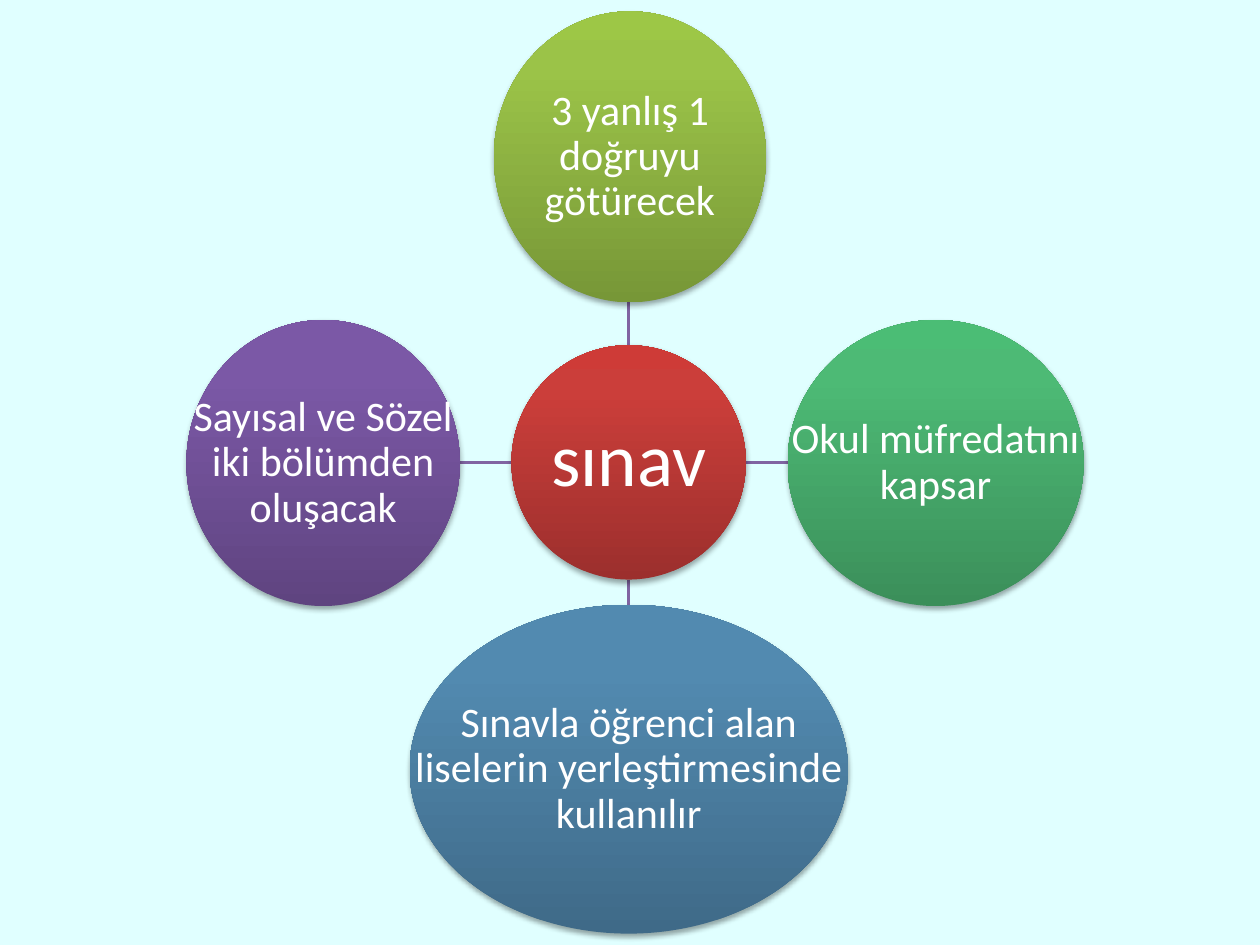
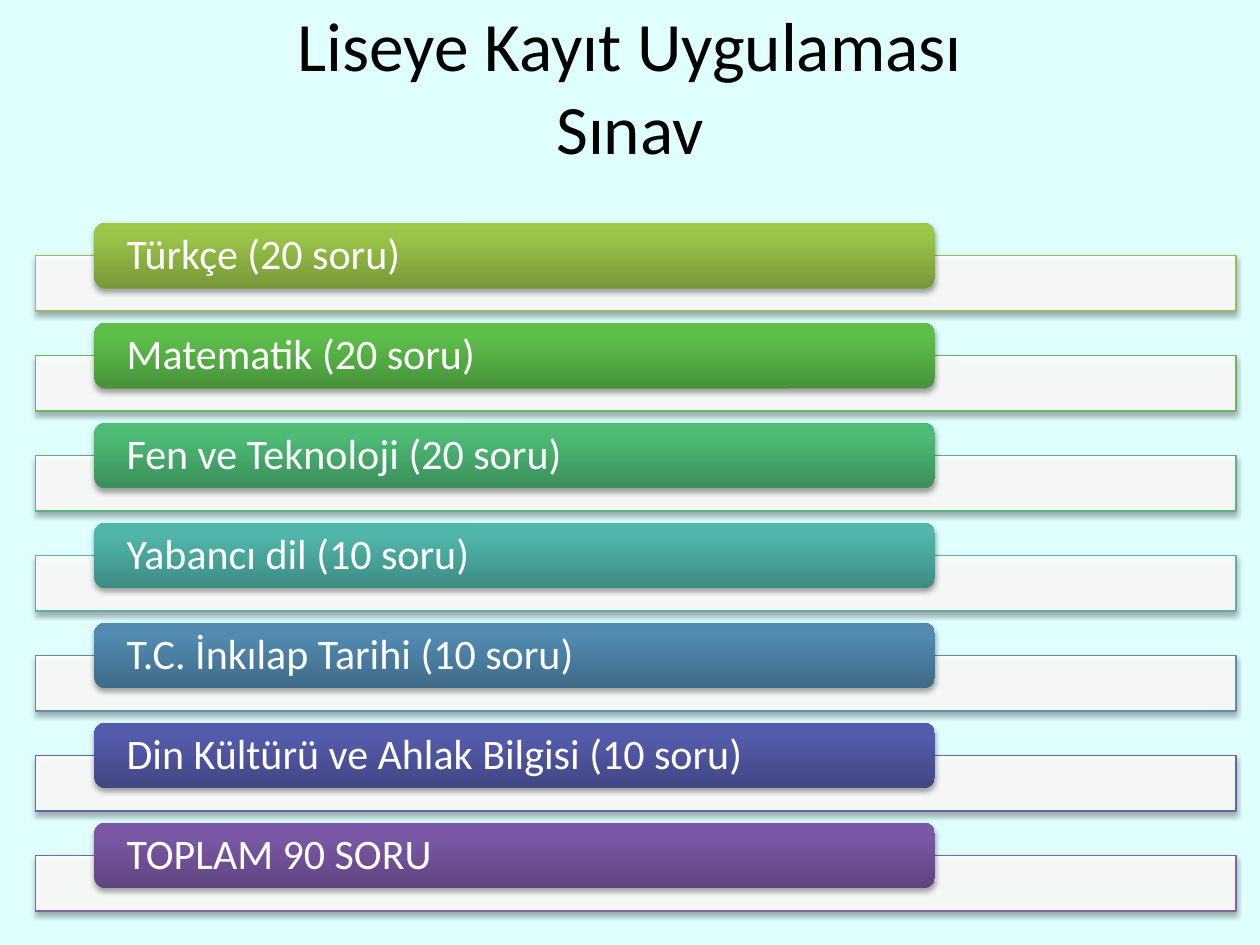
"""Builds two slides on the high school entrance exam: a hub diagram and a question list."""
from lxml import etree
from pptx import Presentation
from pptx.dml.color import RGBColor
from pptx.enum.shapes import MSO_CONNECTOR, MSO_SHAPE
from pptx.enum.text import MSO_ANCHOR, PP_ALIGN
from pptx.oxml.ns import qn
from pptx.util import Inches, Pt

OVAL, BAR, ROUNDED = MSO_SHAPE.OVAL, MSO_SHAPE.RECTANGLE, MSO_SHAPE.ROUNDED_RECTANGLE
STRAIGHT = MSO_CONNECTOR.STRAIGHT
MIDDLE = MSO_ANCHOR.MIDDLE
LEFT, CENTER = PP_ALIGN.LEFT, PP_ALIGN.CENTER

FONT = "Calibri"
BACKGROUND, WHITE, BLACK, SPOKE = "E0FFFF", "FFFFFF", "000000", "8064A2"
GRADIENT_STOPS = (0, 80, 100)
GRADIENTS = {
    "red": ("9C2F2D", "CB3E3A", "CE3B37"),
    "lime": ("779737", "9BC348", "9DC746"),
    "green": ("479339", "5CBF4A", "5BC249"),
    "emerald": ("3B8F5A", "4DBA75", "4BBD75"),
    "teal": ("3D8B83", "50B5AA", "4EB8AC"),
    "blue": ("3F6A88", "528AB0", "518BB3"),
    "indigo": ("414684", "555BAB", "545AAE"),
    "purple": ("5F4480", "7B58A6", "7C57A8"),
}

HUB = ("sınav", "red", (4.06, 2.74, 1.86, 1.86))
RULES = [
    ("3 yanlış 1 doğruyu götürecek", "lime", (3.92, 0.09, 2.16, 2.31)),
    ("Okul müfredatını kapsar", "emerald", (6.25, 2.54, 2.35, 2.27)),
    ("Sınavla öğrenci alan liselerin yerleştirmesinde kullanılır", "blue",
     (3.25, 4.8, 3.48, 2.61)),
    ("Sayısal ve Sözel iki bölümden oluşacak", "purple", (1.48, 2.54, 2.17, 2.27)),
]
SPOKES = [
    ((4.99, 2.74), (4.99, 2.4)),
    ((5.92, 3.67), (6.25, 3.67)),
    ((4.99, 4.6), (4.99, 4.8)),
    ((4.06, 3.67), (3.65, 3.67)),
]

TITLE_LINES = ["Liseye Kayıt Uygulaması", "Sınav"]
SUBJECTS = [
    ("Türkçe (20 soru)", "lime", "9BBB59"),
    ("Matematik (20 soru)", "green", "69B75B"),
    ("Fen ve Teknoloji (20 soru)", "emerald", "5CB37C"),
    ("Yabancı dil (10 soru)", "teal", "5EAFA6"),
    ("T.C. İnkılap Tarihi (10 soru)", "blue", "608CAB"),
    ("Din Kültürü ve Ahlak Bilgisi (10 soru)", "indigo", "6267A6"),
    ("TOPLAM 90 SORU", "purple", "8064A2"),
]
FIRST_TOP, LAST_TOP, BAR_DROP = 1.77, 6.53, 0.26


def color(value):
    return RGBColor.from_string(value)


def add_color(parent, value, alpha=None):
    element = etree.SubElement(parent, qn("a:srgbClr"), val=value)
    if alpha is not None:
        etree.SubElement(element, qn("a:alpha"), val=str(alpha * 1000))


def add_slide(presentation):
    slide = presentation.slides.add_slide(presentation.slide_layouts[6])
    slide.background.fill.solid()
    slide.background.fill.fore_color.rgb = color(BACKGROUND)
    return slide


def add_shadowed(slide, kind, box):
    shape = slide.shapes.add_shape(kind, *map(Inches, box))
    shape.line.fill.background()
    shape.shadow.inherit = False
    effects = shape._element.spPr.find(qn("a:effectLst"))
    shadow = etree.SubElement(effects, qn("a:outerShdw"), blurRad=str(Pt(3.1)),
                              dist=str(Pt(1.8)), dir="5400000", rotWithShape="0")
    add_color(shadow, BLACK, 35)
    return shape


def add_gradient_shape(slide, kind, box, gradient):
    shape = add_shadowed(slide, kind, box)
    shape.fill.gradient()
    shape.fill.gradient_angle = 90
    stops = shape._element.spPr.find(".//" + qn("a:gsLst"))
    stops.clear()
    for position, value in zip(GRADIENT_STOPS, GRADIENTS[gradient]):
        add_color(etree.SubElement(stops, qn("a:gs"), pos=str(position * 1000)), value)
    return shape


def write(shape, lines, size, ink=WHITE, align=CENTER, inset=0.02, spacing=0.9):
    frame = shape.text_frame
    frame.word_wrap = True
    frame.vertical_anchor = MIDDLE
    frame.margin_left = frame.margin_right = Inches(inset)
    frame.margin_top = frame.margin_bottom = Inches(0)
    paragraph = frame.paragraphs[0]
    paragraph.alignment = align
    paragraph.line_spacing = spacing
    for index, line in enumerate(lines):
        if index:
            paragraph.add_line_break()
        run = paragraph.add_run()
        run.text = line
        run.font.name = FONT
        run.font.size = Pt(size)
        run.font.color.rgb = color(ink)


def add_text_box(slide, box, lines, size, **style):
    write(slide.shapes.add_textbox(*map(Inches, box)), lines, size, **style)


def add_bubble(slide, text, gradient, box, size):
    add_gradient_shape(slide, OVAL, box, gradient)
    add_text_box(slide, box, [text], size)


def add_spoke(slide, start, end):
    connector = slide.shapes.add_connector(STRAIGHT, *map(Inches, start + end))
    connector.line.color.rgb = color(SPOKE)
    connector.line.width = Pt(2)
    etree.SubElement(connector._element.spPr, qn("a:effectLst"))


def add_subject(slide, text, gradient, outline, top):
    bar = add_shadowed(slide, BAR, (0.28, top + BAR_DROP, 9.53, 0.44))
    bar.fill.solid()
    bar.fill.fore_color.rgb = color(WHITE)
    fill_color = bar._element.spPr.find(qn("a:solidFill")).find(qn("a:srgbClr"))
    etree.SubElement(fill_color, qn("a:alpha"), val="90000")
    bar.line.color.rgb = color(outline)
    bar.line.width = Pt(0.75)
    label = add_gradient_shape(slide, ROUNDED, (0.75, top, 6.67, 0.52), gradient)
    label.adjustments[0] = 0.17
    write(label, [text], 24, align=LEFT, inset=0.23)


def build_hub_slide(presentation):
    slide = add_slide(presentation)
    for start, end in SPOKES:
        add_spoke(slide, start, end)
    add_bubble(slide, *HUB, 43)
    for rule in RULES:
        add_bubble(slide, *rule, 24)


def build_subject_slide(presentation):
    slide = add_slide(presentation)
    add_text_box(slide, (0.5, 0.13, 9, 1.1), TITLE_LINES, 39.6,
                 ink=BLACK, inset=0.1, spacing=1.0)
    pitch = (LAST_TOP - FIRST_TOP) / (len(SUBJECTS) - 1)
    for index, subject in enumerate(SUBJECTS):
        add_subject(slide, *subject, FIRST_TOP + index * pitch)


def main():
    presentation = Presentation()
    presentation.slide_width, presentation.slide_height = Inches(10), Inches(7.5)
    build_hub_slide(presentation)
    build_subject_slide(presentation)
    presentation.save("out.pptx")


if __name__ == "__main__":
    main()
